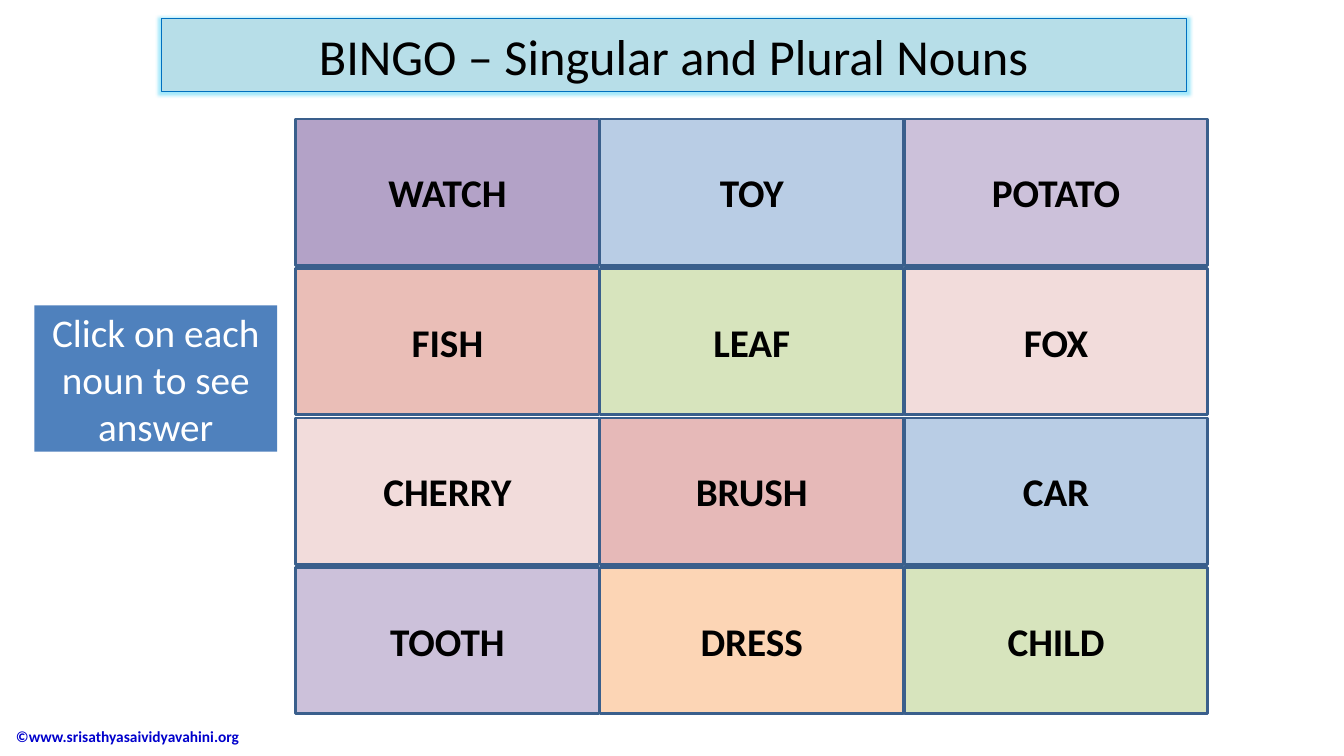
from lxml.etree import SubElement
from pptx import Presentation
from pptx.dml.color import RGBColor
from pptx.enum.shapes import MSO_SHAPE as Shape
from pptx.enum.text import MSO_ANCHOR as Anchor, PP_ALIGN as Align
from pptx.oxml.ns import qn
from pptx.util import Pt

WORD_FORMAT = {"name": "Calibri", "size": Pt(28), "bold": True}
HINT_FORMAT = {"name": "Calibri", "size": Pt(28), "bold": False}
TITLE_FORMAT = {"name": "Calibri", "size": Pt(36), "bold": False}
CREDIT_FORMAT = {"name": "Calibri", "size": Pt(11), "bold": True}

BINGO_ROWS = [
    [("WATCH", "B3A2C7"), ("TOY", "B9CDE5"), ("POTATO", "CCC1DA")],
    [("FISH", "EABEB7"), ("LEAF", "D7E4BD"), ("FOX", "F2DCDB")],
    [("CHERRY", "F2DCDB"), ("BRUSH", "E6B9B8"), ("CAR", "B9CDE5")],
    [("TOOTH", "CCC1DA"), ("DRESS", "FCD5B5"), ("CHILD", "D7E4BD")],
]
GRID_LEFT, GRID_TOP = 211.2, 85
CELL_WIDTH, CELL_HEIGHT = 216.7, 104.4
COLUMN_STEP, ROW_STEP = 217.4, 106.8


def color(hex_string):
    """Return the colour for a hex string."""
    return RGBColor.from_string(hex_string)


def write(shape, text, text_format, text_color, align=Align.CENTER):
    """Put one formatted, vertically centred paragraph in a shape."""
    frame = shape.text_frame
    frame.word_wrap = True
    frame.vertical_anchor = Anchor.MIDDLE
    frame.text = text
    paragraph = frame.paragraphs[0]
    paragraph.alignment = align
    for name, value in text_format.items():
        setattr(paragraph.font, name, value)
    paragraph.font.color.rgb = color(text_color)


def paint(shape, fill, line=None, width=0):
    """Set a shape's fill and its outline, if it has one."""
    shape.fill.solid()
    shape.fill.fore_color.rgb = color(fill)
    if line:
        shape.line.color.rgb = color(line)
        shape.line.width = Pt(width)
    else:
        shape.line.fill.background()


def add_box(slide, box, fill, line=None, width=0):
    """Add a flat rectangle."""
    shape = slide.shapes.add_shape(Shape.RECTANGLE, *map(Pt, box))
    shape.shadow.inherit = False
    paint(shape, fill, line, width)
    return shape


def add_glow(shape, glow_color, radius, opacity):
    """Surround a shape with a soft glow."""
    effects = SubElement(shape.element.spPr, qn("a:effectLst"))
    glow = SubElement(effects, qn("a:glow"), rad=str(Pt(radius)))
    tint = SubElement(glow, qn("a:srgbClr"), val=glow_color)
    SubElement(tint, qn("a:alpha"), val=str(opacity * 1000))


def format_title(slide):
    """Place and format the glowing title."""
    title = slide.shapes.title
    title.left, title.top, title.width, title.height = map(Pt, (115.2, 13.4, 732.2, 51.8))
    paint(title, "B7DEE8", "0070C0", 0.75)
    add_glow(title, "1DC7F4", 5, 40)
    write(title, "BINGO – Singular and Plural Nouns", TITLE_FORMAT, "000000")


def add_bingo_grid(slide):
    """Add the grid of noun cells."""
    for row, cells in enumerate(BINGO_ROWS):
        for column, (noun, fill) in enumerate(cells):
            box = (GRID_LEFT + column * COLUMN_STEP, GRID_TOP + row * ROW_STEP,
                   CELL_WIDTH, CELL_HEIGHT)
            cell = add_box(slide, box, fill, "3A5F8C", 2)
            write(cell, noun, WORD_FORMAT, "000000")


def add_credit(slide):
    """Add the copyright line at the bottom left."""
    credit = slide.shapes.add_textbox(*map(Pt, (4.3, 511.2, 254, 29)))
    write(credit, "©www.srisathyasaividyavahini.org", CREDIT_FORMAT, "0000CC", Align.LEFT)


def main():
    """Build and save the bingo slide."""
    presentation = Presentation()
    presentation.slide_width, presentation.slide_height = Pt(960), Pt(540)
    slide = presentation.slides.add_slide(presentation.slide_layouts[5])
    format_title(slide)
    add_credit(slide)
    add_bingo_grid(slide)
    hint = add_box(slide, (24.5, 218.2, 173.5, 104.4), "4F81BD")
    write(hint, "Click on each noun to see answer", HINT_FORMAT, "FFFFFF")
    presentation.save("out.pptx")


if __name__ == "__main__":
    main()
